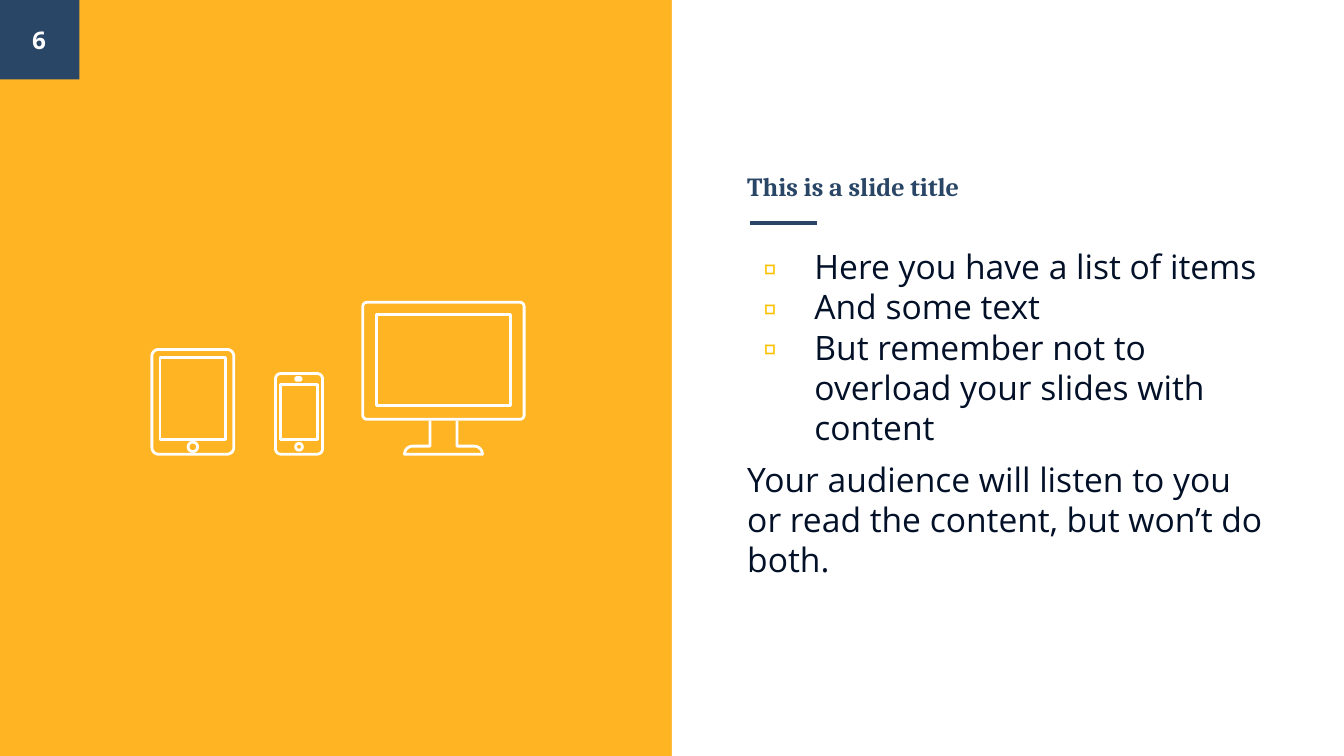
import math

import lxml.etree
import pptx
import pptx.dml.color
import pptx.enum.shapes
import pptx.enum.text
import pptx.oxml.ns
import pptx.util

Inches = pptx.util.Inches
Pt = pptx.util.Pt
ALIGN = pptx.enum.text.PP_ALIGN
ANCHOR = pptx.enum.text.MSO_ANCHOR
NAVY, GOLD, WHITE = "294667", "FFA800", "FFFFFF"
WIDE = 10
HIGH = WIDE * 9 / 16

TITLE = {"size": Pt(14), "name": "Cambria", "bold": True}
BODY = {"size": Pt(18), "name": "Open Sans", "bold": False}
NUMBER = {"size": Pt(13), "name": "Open Sans", "bold": True}
ITEMS = [
    "Here you have a list of items",
    "And some text",
    "But remember not to overload your slides with content",
]
CLOSING = "Your audience will listen to you or read the content, but won’t do both."


def color(code):
    return pptx.dml.color.RGBColor.from_string(code)


def node(parent, tag, **attrs):
    item = lxml.etree.SubElement(parent, pptx.oxml.ns.qn(tag))
    for key, value in attrs.items():
        item.set(key, value)
    return item


def panel(slide, box, code, alpha=None):
    """Plain filled rectangle, with opacity in percent if given."""
    kind = pptx.enum.shapes.MSO_SHAPE.RECTANGLE
    shape = slide.shapes.add_shape(kind, *map(Inches, box))
    shape.shadow.inherit = False
    shape.fill.solid()
    shape.fill.fore_color.rgb = color(code)
    shape.line.fill.background()
    if alpha:
        fill = shape.fill._xPr.find(pptx.oxml.ns.qn("a:solidFill"))
        node(fill[0], "a:alpha", val=str(alpha * 1000))


def rule(slide, left, right, y):
    """Short line under the title."""
    kind = pptx.enum.shapes.MSO_CONNECTOR.STRAIGHT
    line = slide.shapes.add_connector(kind, *map(Inches, (left, y, right, y)))
    line.line.color.rgb = color(NAVY)
    line.line.width = Pt(2.25)
    node(line._element.spPr, "a:effectLst")


def frame(shape, box, anchor):
    """Place a text shape and set up its frame."""
    sides = ("left", "top", "width", "height")
    for side, value in zip(sides, box):
        setattr(shape, side, Inches(value))
    text = shape.text_frame
    look = {"word_wrap": True, "vertical_anchor": anchor,
            "auto_size": pptx.enum.text.MSO_AUTO_SIZE.NONE}
    look.update({"margin_" + s: Inches(0.1)
                 for s in ("left", "top", "right", "bottom")})
    for key, value in look.items():
        setattr(text, key, value)
    return text


def write(para, words, style, code, align=ALIGN.LEFT, before=0):
    para.alignment = align
    para.space_before = Pt(before)
    run = para.add_run()
    run.text = words
    for key, value in style.items():
        setattr(run.font, key, value)
    run.font.color.rgb = color(code)


def bullet(para, mark=None):
    """Hang the paragraph on a mark, or clear the list format."""
    props = para._p.get_or_add_pPr()
    props.set("marL", str(Inches(0.5 if mark else 0)))
    props.set("indent", str(Inches(-0.38 if mark else 0)))
    if mark:
        node(node(props, "a:buClr"), "a:srgbClr", val="FFC200")
        node(props, "a:buFont", typeface="Open Sans")
        node(props, "a:buChar", char=mark)
    else:
        node(props, "a:buNone")


def ring(left, top, width, height, curve=0):
    """Points of a rectangle with rounded corners; a full curve is a circle."""
    right, base = left + width, top + height
    if not curve:
        return [(left, top), (right, top), (right, base), (left, base)]
    hubs = [(right - curve, base - curve), (left + curve, base - curve),
            (left + curve, top + curve), (right - curve, top + curve)]
    return [(x + curve * math.cos(math.radians(turn)),
             y + curve * math.sin(math.radians(turn)))
            for corner, (x, y) in enumerate(hubs)
            for turn in range(corner * 90, corner * 90 + 91, 15)]


def icon(slide, paths, close=True):
    """White outline drawing made of one or more paths."""
    paths = [[(Inches(x), Inches(y)) for x, y in path] for path in paths]
    pen = slide.shapes.build_freeform(*paths[0][0])
    for count, path in enumerate(paths):
        if count:
            pen.move_to(*path[0])
        pen.add_line_segments(path[1:], close=close)
    shape = pen.convert_to_shape()
    shape.shadow.inherit = False
    shape.fill.background()
    shape.line.color.rgb = color(WHITE)
    shape.line.width = Pt(1.5)
    node(shape.line._get_or_add_ln(), "a:round")


def foot():
    """Open outline of the screen stand, mirrored about its middle."""
    mid, base, curve = 3.3, 3.38, 0.06
    half = [(0.1, 3.13), (0.1, base - curve)]
    for turn in range(90, -1, -15):
        angle = math.radians(turn)
        half.append((0.23 + curve * math.cos(angle),
                     base - curve * math.sin(angle)))
    return ([(mid - x, y) for x, y in half]
            + [(mid + x, y) for x, y in reversed(half)])


def main():
    deck = pptx.Presentation()
    deck.slide_width, deck.slide_height = Inches(WIDE), Inches(HIGH)
    slide = deck.slides.add_slide(deck.slide_layouts[1])
    title, body = slide.placeholders

    # Background panels, number tab and title rule
    half = WIDE / 2
    panel(slide, (0, 0, half, HIGH), GOLD, 86)
    panel(slide, (half, 0, half, HIGH), WHITE)
    rule(slide, 5.58, 6.08, 1.66)
    panel(slide, (0, 0, 0.59, 0.59), NAVY)

    # Title and list, brought in front of the panels
    for holder in (title, body):
        slide.shapes._spTree.append(holder._element)
    text = frame(title, (5.46, 0.76, 4.04, 0.84), ANCHOR.BOTTOM)
    write(text.paragraphs[0], "This is a slide title", TITLE, NAVY)
    text = frame(body, (5.46, 1.73, 4.04, 3.65), ANCHOR.TOP)
    for count, words in enumerate(ITEMS + [CLOSING]):
        para = text.add_paragraph() if count else text.paragraphs[0]
        last = words == CLOSING
        write(para, words, BODY, "021028",
              before=6 if last or not count else 0)
        bullet(para, None if last else "▫")

    # Tablet, phone, stand and screen
    icon(slide, [ring(1.13, 2.6, 0.61, 0.78, 0.05),
                 ring(1.4, 3.29, 0.07, 0.07, 0.035),
                 ring(1.19, 2.66, 0.49, 0.61)])
    icon(slide, [ring(2.05, 2.78, 0.35, 0.6, 0.04),
                 ring(2.2, 2.81, 0.04, 0.02, 0.01),
                 ring(2.2, 3.3, 0.05, 0.05, 0.025),
                 ring(2.09, 2.86, 0.27, 0.41)])
    icon(slide, [foot()], close=False)
    icon(slide, [ring(2.7, 2.25, 1.2, 0.87, 0.03),
                 ring(2.8, 2.34, 1, 0.68)])

    # Slide number
    box = (-0.01, 0, 0.6, 0.59)
    label = slide.shapes.add_textbox(*map(Inches, box))
    text = frame(label, box, ANCHOR.MIDDLE)
    write(text.paragraphs[0], "6", NUMBER, WHITE, ALIGN.CENTER)

    deck.save("out.pptx")


if __name__ == "__main__":
    main()
